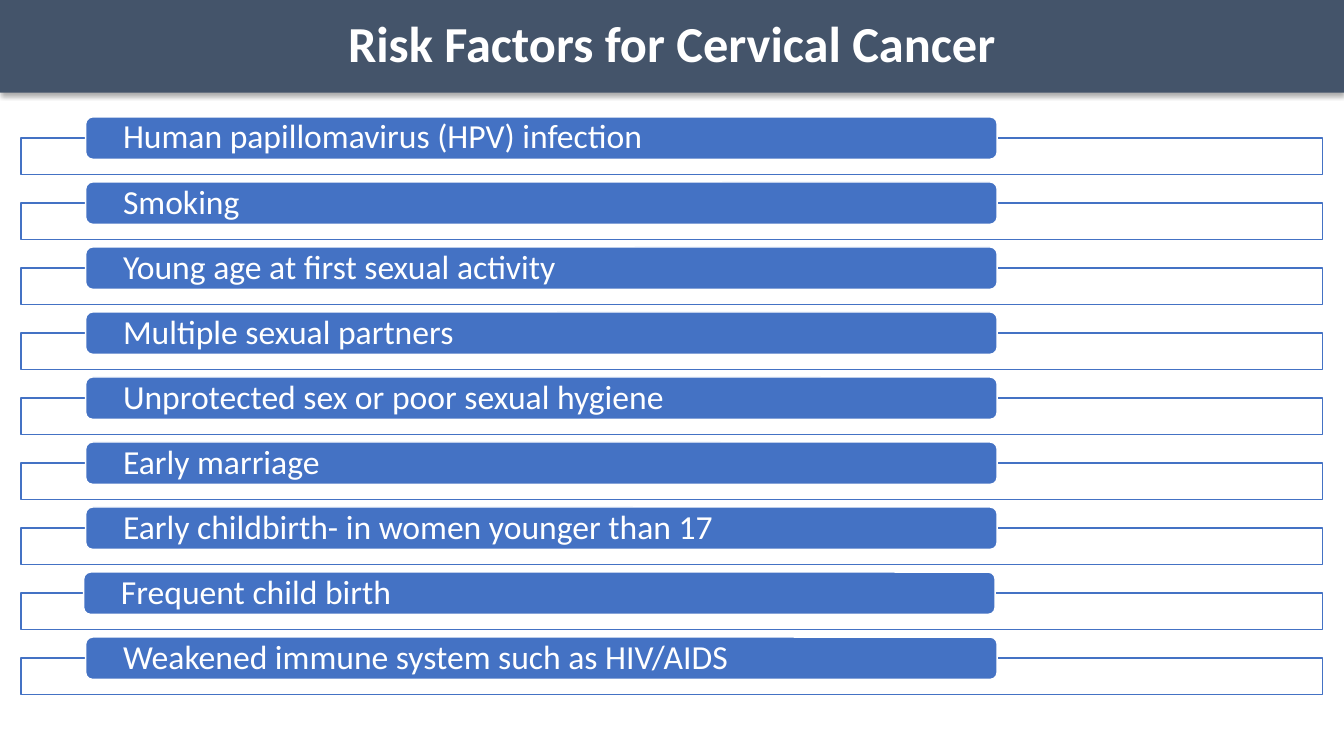
from lxml import etree
from pptx import Presentation
from pptx import util as u
from pptx.dml.color import RGBColor
from pptx.enum import shapes, text
from pptx.oxml import ns

COLORS = {"banner": "44546A", "accent": "4472C4", "light": "FFFFFF", "shadow": "000000"}

RISK_FACTORS = [
    "Human papillomavirus (HPV) infection",
    "Smoking",
    "Young age at first sexual activity",
    "Multiple sexual partners",
    "Unprotected sex or poor sexual hygiene",
    "Early marriage",
    "Early childbirth- in women younger than 17",
    "Frequent child birth",
    "Weakened immune system such as HIV/AIDS",
]
SHIFTED_FACTOR = "Frequent child birth"
FIRST_TOP, PITCH = 1.16, 0.645


class RiskSlide:
    font = "Calibri"

    def __init__(self, slide):
        self.slide = slide

    def block(self, kind, box, fill, line=None):
        """Add a filled shape without shadow; box is left, top, width, height in inches."""
        shape = self.slide.shapes.add_shape(kind, *map(u.Inches, box))
        shape.shadow.inherit = False
        shape.fill.solid()
        shape.fill.fore_color.rgb = RGBColor.from_string(COLORS[fill])
        if line:
            shape.line.color.rgb = RGBColor.from_string(COLORS[line])
            shape.line.width = u.Pt(1)
        else:
            shape.line.fill.background()
        return shape

    def label(self, shape, words, size, align, inset, bold=False):
        frame = shape.text_frame
        frame.word_wrap = True
        frame.vertical_anchor = text.MSO_ANCHOR.MIDDLE
        frame.margin_left = frame.margin_right = u.Inches(inset)
        frame.margin_top = frame.margin_bottom = 0
        paragraph = frame.paragraphs[0]
        paragraph.text = words
        paragraph.alignment = align
        paragraph.line_spacing = 0.9
        paragraph.font.name = self.font
        paragraph.font.size = u.Pt(size)
        paragraph.font.bold = bold
        paragraph.font.color.rgb = RGBColor.from_string(COLORS["light"])

    def drop_shadow(self, shape):
        effects = shape._element.spPr.find(ns.qn("a:effectLst"))
        shadow = etree.SubElement(
            effects, ns.qn("a:outerShdw"), blurRad=str(u.Pt(3.5)),
            dist=str(u.Pt(2.2)), dir="5400000", algn="ctr", rotWithShape="0")
        color = etree.SubElement(shadow, ns.qn("a:srgbClr"), val=COLORS["shadow"])
        etree.SubElement(color, ns.qn("a:alpha"), val="32000")

    def banner(self, words):
        banner = self.block(shapes.MSO_SHAPE.RECTANGLE, (0, 0, 13.33, 0.92), "banner")
        self.drop_shadow(banner)
        self.label(banner, words, 36, text.PP_ALIGN.CENTER, 0.1, bold=True)

    def frame(self, top):
        """Add the wide outlined box behind a factor."""
        frame = self.block(shapes.MSO_SHAPE.RECTANGLE, (0.21, top, 12.91, 0.36),
                           "light", "accent")
        color = frame._element.spPr.find(ns.qn("a:solidFill"))[0]
        etree.SubElement(color, ns.qn("a:alpha"), val="90000")

    def factor(self, words, left, top):
        self.frame(top + 0.21)
        pill = self.block(shapes.MSO_SHAPE.ROUNDED_RECTANGLE, (left, top, 9.04, 0.42),
                          "accent", "light")
        self.label(pill, words, 24, text.PP_ALIGN.LEFT, 0.35)


def main():
    deck = Presentation()
    deck.slide_width, deck.slide_height = u.Inches(13.33), u.Inches(7.5)
    risks = RiskSlide(deck.slides.add_slide(deck.slide_layouts[6]))
    risks.banner("Risk Factors for Cervical Cancer")
    for row, words in enumerate(RISK_FACTORS):
        left = 0.83 if words == SHIFTED_FACTOR else 0.85
        risks.factor(words, left, FIRST_TOP + row * PITCH)
    deck.save("out.pptx")


if __name__ == "__main__":
    main()
